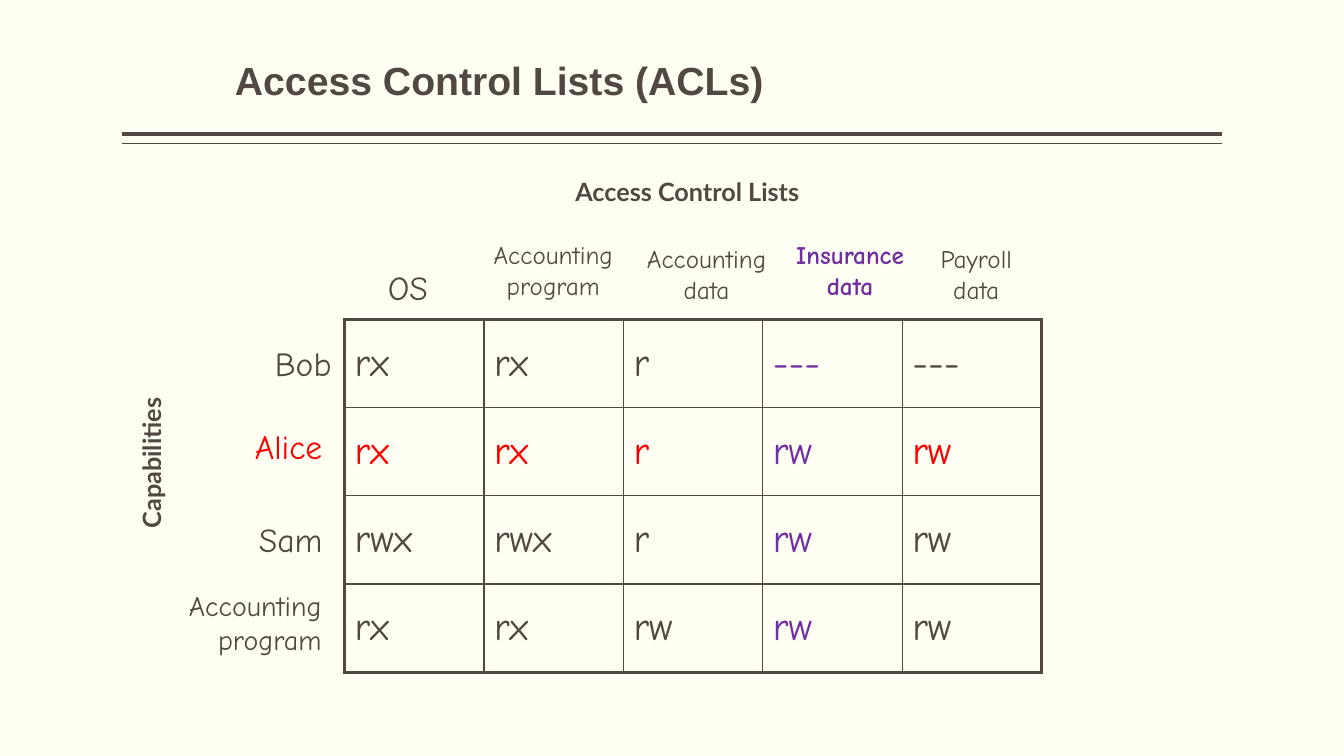
from dataclasses import dataclass

from lxml import etree
from pptx import Presentation
from pptx.dml.color import RGBColor
from pptx.enum import shapes, text
from pptx.oxml import ns
from pptx.util import Pt


@dataclass(frozen=True)
class Theme:
    """Colours, fonts and type sizes of the slide."""
    back: str = "FFFFF3"
    ink: str = "514843"
    red: str = "FF0000"
    violet: str = "7030A0"
    head: str = "Arial"
    body: str = "Comic Neue"
    label: str = "Lato"
    big: int = 28
    mid: int = 24
    side: int = 20
    small: int = 18
    thin: float = 1
    edge: float = 2.25
    thick: float = 3


T = Theme()
LEFT, MID, RIGHT = text.PP_ALIGN.LEFT, text.PP_ALIGN.CENTER, text.PP_ALIGN.RIGHT

RIGHTS = [
    ("Bob", ["rx", "rx", "r", "---", "---"]),
    ("Alice", ["rx", "rx", "r", "rw", "rw"]),
    ("Sam", ["rwx", "rwx", "r", "rw", "rw"]),
    ("Accounting\nprogram", ["rx", "rx", "rw", "rw", "rw"]),
]
USER = "Alice"
ASSET = 3

COLS = [
    ("OS", 23.8, -41, 50.4, 36, T.mid, LEFT),
    ("Accounting\nprogram", 95, -60.5, 108, 51, T.small, MID),
    ("Accounting\ndata", 204.5, -57.6, 108, 51, T.small, MID),
    ("Insurance\ndata", 311, -60.5, 100, 51, T.small, MID),
    ("Payroll\ndata", 415.4, -57.6, 71.3, 51, T.small, MID),
]
ROWS = [
    (-56.9, 13, 56.9, 36, T.mid, LEFT),
    (-71.3, 72.7, 71.3, 36, T.mid, LEFT),
    (-68.4, 139, 62.6, 36, T.mid, LEFT),
    (-127.4, 188.6, 118, 55.4, T.side, RIGHT),
]


def write(para, words, size, font, color=T.ink, bold=False):
    """Add one styled run to a paragraph."""
    run = para.add_run()
    run.text = words
    run.font.size = Pt(size)
    run.font.name = font
    run.font.bold = bold
    run.font.color.rgb = RGBColor.from_string(color)


def note(slide, box, words, size, font, color=T.ink, bold=False, align=LEFT):
    """Place an unwrapped text box, one paragraph for each line."""
    shape = slide.shapes.add_textbox(*map(Pt, box))
    frame = shape.text_frame
    frame.word_wrap = False
    frame.auto_size = text.MSO_AUTO_SIZE.SHAPE_TO_FIT_TEXT
    for i, line in enumerate(words.split("\n")):
        para = frame.paragraphs[0] if i == 0 else frame.add_paragraph()
        para.alignment = align
        write(para, line, size, font, color, bold)
    return shape


def rule(slide, left, top, width, weight):
    """Draw a level line."""
    line = slide.shapes.add_connector(
        shapes.MSO_CONNECTOR.STRAIGHT, Pt(left), Pt(top), Pt(left + width), Pt(top))
    line.line.color.rgb = RGBColor.from_string(T.ink)
    line.line.width = Pt(weight)
    etree.SubElement(line.element.spPr, ns.qn("a:effectLst"))


def header(slide, box):
    """Place the title above a double rule."""
    left, top, width, height = box
    shape = slide.shapes.add_textbox(Pt(left + 80.8), Pt(top), Pt(617.8), Pt(54))
    frame = shape.text_frame
    frame.word_wrap = True
    frame.vertical_anchor = text.MSO_ANCHOR.BOTTOM
    frame.margin_left = frame.margin_right = 0
    para = frame.paragraphs[0]
    para.line_spacing = 0.9
    write(para, "Access Control Lists (ACLs)", T.big, T.head, bold=True)
    rule(slide, left, top + height - 7, width, T.thick)
    rule(slide, left, top + height, width, T.thin)


def border(cell, weights):
    """Set the left, right, top and bottom lines of a cell."""
    props = cell._tc.get_or_add_tcPr()
    for i, (side, weight) in enumerate(zip("LRTB", weights)):
        line = etree.Element(ns.qn(f"a:ln{side}"), w=str(Pt(weight)))
        fill = etree.SubElement(line, ns.qn("a:solidFill"))
        etree.SubElement(fill, ns.qn("a:srgbClr"), val=T.ink)
        props.insert(i, line)


def tint(user, col):
    """Pick the colour of an entry by its user and column."""
    if col == ASSET:
        return T.violet
    return T.red if user == USER else T.ink


def grid(slide, box):
    """Fill the table of access rights."""
    left, top, width, height = box
    rows, cols = len(RIGHTS), len(COLS)
    table = slide.shapes.add_table(rows, cols, *map(Pt, box)).table
    table.first_row = table.horz_banding = False
    for col in table.columns:
        col.width = Pt(width / cols)
    for r, (user, marks) in enumerate(RIGHTS):
        table.rows[r].height = Pt(height / rows)
        for c, mark in enumerate(marks):
            cell = table.cell(r, c)
            cell.fill.background()
            cell.vertical_anchor = text.MSO_ANCHOR.MIDDLE
            para = cell.text_frame.paragraphs[0]
            para.space_before = Pt(T.big * 0.2)
            write(para, mark, T.big, T.body, tint(user, c))
            outer = (c == 0, c == cols - 1, r == 0, r == rows - 1)
            border(cell, [T.edge if end else T.thin for end in outer])


def matrix(slide, box):
    """Place the table with its row, column and axis labels."""
    left, top = box[:2]
    grid(slide, box)
    for c, (name, dx, dy, wide, high, size, align) in enumerate(COLS):
        note(slide, (left + dx, top + dy, wide, high), name, size, T.body,
             T.violet if c == ASSET else T.ink, c == ASSET, align)
    for (name, marks), (dx, dy, wide, high, size, align) in zip(RIGHTS, ROWS):
        note(slide, (left + dx, top + dy, wide, high), name, size, T.body,
             T.red if name == USER else T.ink, align=align)
    axis = note(slide, (left - 193.6, top + 86.4, 110.9, 28.8),
                "Capabilities", T.small, T.label, bold=True)
    axis.rotation = 270
    note(slide, (left + 157.7, top - 105.8, 182.2, 28.8),
         "Access Control Lists", T.small, T.label, bold=True)


def main():
    """Build and save the slide."""
    deck = Presentation()
    deck.slide_width, deck.slide_height = Pt(960), Pt(540)
    slide = deck.slides.add_slide(deck.slide_layouts[6])
    fill = slide.background.fill
    fill.solid()
    fill.fore_color.rgb = RGBColor.from_string(T.back)
    header(slide, (87, 23.8, 786, 78.8))
    matrix(slide, (246.2, 228.2, 498, 252))
    deck.save("out.pptx")


if __name__ == "__main__":
    main()
